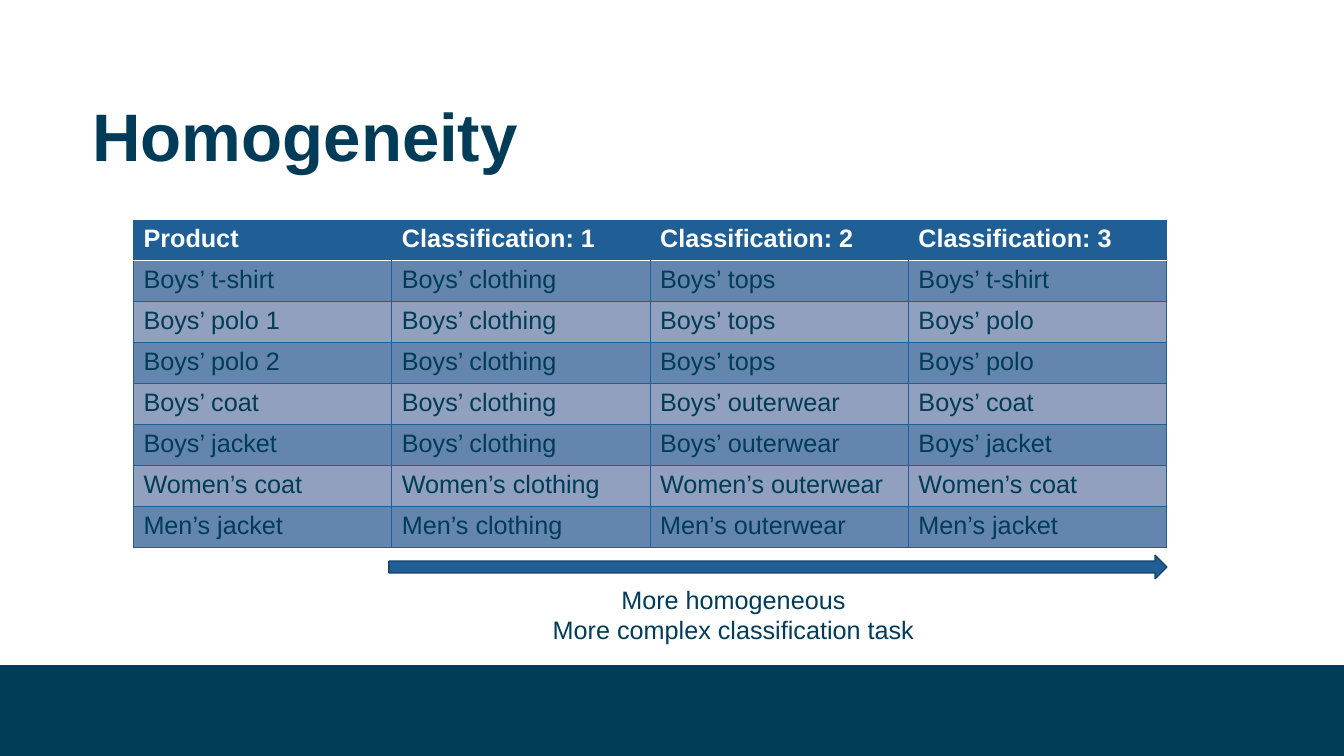
from dataclasses import dataclass

from lxml import etree
from pptx import Presentation, util as u
from pptx.dml.color import RGBColor
from pptx.enum import shapes, text
from pptx.oxml import ns

SLIDE_WIDTH, SLIDE_HEIGHT = u.Inches(13.333), u.Inches(7.5)
COLORS = {
    "navy": "003C57",
    "blue": "205F95",
    "outline": "18466E",
    "dark_band": "6486AE",
    "light_band": "91A0BE",
    "white": "FFFFFF",
}
FONT = "Arial"
HEADER = ["Product", "Classification: 1", "Classification: 2", "Classification: 3"]
PRODUCTS = [
    ["Boys’ t-shirt", "Boys’ clothing", "Boys’ tops", "Boys’ t-shirt"],
    ["Boys’ polo 1", "Boys’ clothing", "Boys’ tops", "Boys’ polo"],
    ["Boys’ polo 2", "Boys’ clothing", "Boys’ tops", "Boys’ polo"],
    ["Boys’ coat", "Boys’ clothing", "Boys’ outerwear", "Boys’ coat"],
    ["Boys’ jacket", "Boys’ clothing", "Boys’ outerwear", "Boys’ jacket"],
    ["Women’s coat", "Women’s clothing", "Women’s outerwear", "Women’s coat"],
    ["Men’s jacket", "Men’s clothing", "Men’s outerwear", "Men’s jacket"],
]


@dataclass(frozen=True)
class Box:
    """A place on the slide, in percent of its width and height."""
    left: float
    top: float
    width: float
    height: float

    def lengths(self) -> tuple[int, int, int, int]:
        return (int(SLIDE_WIDTH * self.left / 100), int(SLIDE_HEIGHT * self.top / 100),
                int(SLIDE_WIDTH * self.width / 100), int(SLIDE_HEIGHT * self.height / 100))


@dataclass(frozen=True)
class Block:
    kind: shapes.MSO_SHAPE
    box: Box
    fill: str
    outline: str | None = None


@dataclass(frozen=True)
class Label:
    box: Box
    lines: list[str]
    size: int
    bold: bool
    paragraph_format: dict


BLOCKS = [
    Block(shapes.MSO_SHAPE.RECTANGLE, Box(0, 88, 100, 12), "navy"),
    Block(shapes.MSO_SHAPE.RIGHT_ARROW, Box(28.94, 73.45, 57.88, 3.1), "blue", "outline"),
]
LABELS = [
    Label(Box(6.88, 12.9, 86.25, 11.07), ["Homogeneity"], 48, True,
          {"line_spacing": 0.9, "space_after": u.Pt(10)}),
    Label(Box(34.05, 76.55, 41.78, 9.42),
          ["More homogeneous", "More complex classification task"], 18, False,
          {"alignment": text.PP_ALIGN.CENTER}),
]
TABLE_BOX = Box(9.93, 29.1, 76.88, 43.28)


def color(name: str) -> RGBColor:
    return RGBColor.from_string(COLORS[name])


def set_font(paragraph, size: int, bold: bool, color_name: str) -> None:
    for name, value in {"name": FONT, "size": u.Pt(size), "bold": bold}.items():
        setattr(paragraph.font, name, value)
    paragraph.font.color.rgb = color(color_name)


def draw_block(slide, block: Block) -> None:
    shape = slide.shapes.add_shape(block.kind, *block.box.lengths())
    shape.shadow.inherit = False
    shape.fill.solid()
    shape.fill.fore_color.rgb = color(block.fill)
    if block.outline:
        shape.line.color.rgb = color(block.outline)
        shape.line.width = u.Pt(1)
    else:
        shape.line.fill.background()


def draw_label(slide, label: Label) -> None:
    frame = slide.shapes.add_textbox(*label.box.lengths()).text_frame
    frame_format = {
        "word_wrap": True,
        "auto_size": text.MSO_AUTO_SIZE.SHAPE_TO_FIT_TEXT,
        "vertical_anchor": text.MSO_ANCHOR.BOTTOM,
        "margin_left": 0,
    }
    for name, value in frame_format.items():
        setattr(frame, name, value)
    frame.text = "\n".join(label.lines)
    for paragraph in frame.paragraphs:
        for name, value in label.paragraph_format.items():
            setattr(paragraph, name, value)
        set_font(paragraph, label.size, label.bold, "navy")


def set_border(cell, side: str, color_name: str | None, points: float) -> None:
    properties = cell._tc.get_or_add_tcPr()
    border = etree.SubElement(properties, ns.qn(f"a:ln{side}"), w=str(u.Pt(points)))
    if color_name is None:
        etree.SubElement(border, ns.qn("a:noFill"))
        return
    fill = etree.SubElement(border, ns.qn("a:solidFill"))
    etree.SubElement(fill, ns.qn("a:srgbClr"), val=COLORS[color_name])


def draw_table(slide, box: Box) -> None:
    rows = [HEADER, *PRODUCTS]
    last_column = len(HEADER) - 1
    table = slide.shapes.add_table(len(rows), len(HEADER), *box.lengths()).table
    table.horz_banding = False
    for row, values in enumerate(rows):
        is_header = row == 0
        band = "blue" if is_header else "dark_band" if row % 2 else "light_band"
        for column, value in enumerate(values):
            cell = table.cell(row, column)
            cell.text = value
            set_font(cell.text_frame.paragraphs[0], 18, is_header,
                     "white" if is_header else "navy")
            # Borders come before the fill; the header has no inner verticals
            inner_left = is_header and column > 0
            inner_right = is_header and column < last_column
            set_border(cell, "L", None if inner_left else "blue", 0.5)
            set_border(cell, "R", None if inner_right else "blue", 0.5)
            set_border(cell, "T", *(("white", 1) if row == 1 else ("blue", 0.5)))
            set_border(cell, "B", *(("white", 1) if is_header else ("blue", 0.5)))
            cell.fill.solid()
            cell.fill.fore_color.rgb = color(band)


def main() -> None:
    presentation = Presentation()
    presentation.slide_width, presentation.slide_height = SLIDE_WIDTH, SLIDE_HEIGHT
    slide = presentation.slides.add_slide(presentation.slide_layouts[6])

    # Footer band and arrow
    for block in BLOCKS:
        draw_block(slide, block)

    # Classification table
    draw_table(slide, TABLE_BOX)

    # Title and arrow caption
    for label in LABELS:
        draw_label(slide, label)

    presentation.save("out.pptx")


if __name__ == "__main__":
    main()
